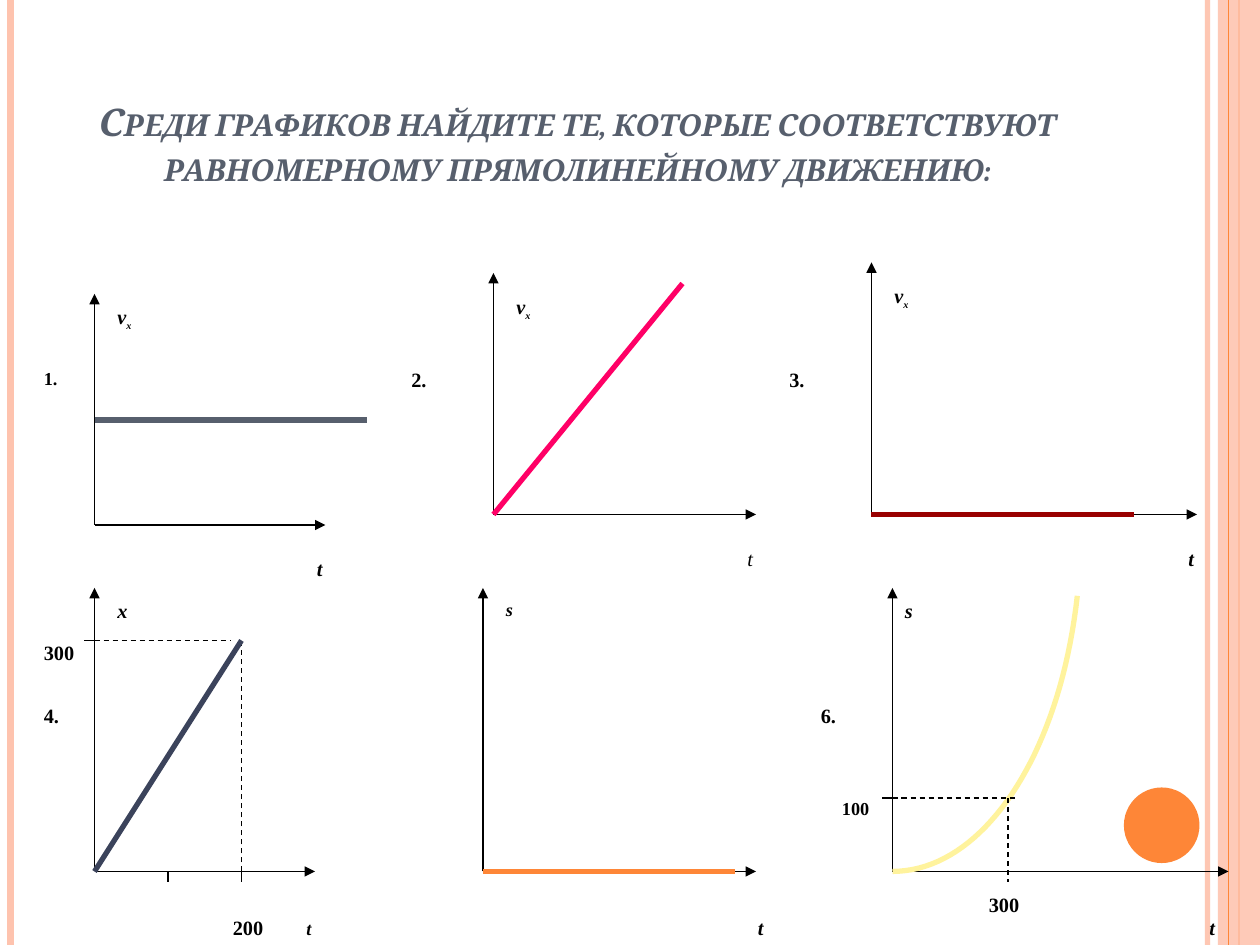
from pptx import Presentation
from pptx.dml.color import RGBColor
from pptx.enum.dml import MSO_LINE
from pptx.enum.shapes import MSO_CONNECTOR, MSO_SHAPE
from pptx.enum.text import MSO_ANCHOR, MSO_AUTO_SIZE, PP_ALIGN
from pptx.oxml.ns import qn
from pptx.util import Pt
from lxml.etree import SubElement

COLORS = {
    "black": "000000", "slate": "575F6D", "navy": "3B435B", "pink": "FF0066",
    "red": "990000", "orange": "FE8637", "peach": "FEC3AE", "yellow": "FFF39D",
}

prs = Presentation()
prs.slide_width, prs.slide_height = Pt(720), Pt(540)
s = prs.slides.add_slide(prs.slide_layouts[5])


def add_run(p, text, size=20, font="Times New Roman", color="black",
            bold=True, italic=False, **attrs):
    r = p.add_run()
    r.text = text
    f = r.font
    f.size, f.name, f.bold, f.italic = Pt(size), font, bold, italic
    f.color.rgb = RGBColor.from_string(COLORS[color])
    for name, value in attrs.items():
        r._r.get_or_add_rPr().set(name, value)


def add_line(x1, y1, x2, y2, color="black", width=0.75, dash=False, arrow=False, alpha=None):
    c = s.shapes.add_connector(MSO_CONNECTOR.STRAIGHT, Pt(x1), Pt(y1), Pt(x2), Pt(y2))
    c.line.color.rgb = RGBColor.from_string(COLORS[color])
    c.line.width = Pt(width)
    if dash:
        c.line.dash_style = MSO_LINE.DASH
    if arrow:
        SubElement(c.line._get_or_add_ln(), qn("a:tailEnd"), type="triangle")
    if alpha:
        for clr in c._element.iter(qn("a:srgbClr")):
            SubElement(clr, qn("a:alpha"), val=str(alpha * 1000))
    SubElement(c._element.spPr, qn("a:effectLst"))


# Side stripes, band and dot
add_line(690, 0, 690, 540, "peach", 3, alpha=93)
add_line(6, 0, 6, 540, "peach", 4.5)
add_line(708, 0, 708, 540, "orange", 1.5)
for kind, x, y, w, h, color, alpha in [
    (MSO_SHAPE.RECTANGLE, 696, 0, 24, 540, "peach", 87),
    (MSO_SHAPE.OVAL, 642.24, 450, 43.2, 43.2, "orange", 100),
]:
    sp = s.shapes.add_shape(kind, Pt(x), Pt(y), Pt(w), Pt(h))
    sp.shadow.inherit = False
    sp.fill.solid()
    sp.fill.fore_color.rgb = RGBColor.from_string(COLORS[color])
    sp.line.fill.background()
    if alpha < 100:
        for clr in sp._element.iter(qn("a:srgbClr")):
            SubElement(clr, qn("a:alpha"), val=str(alpha * 1000))
    if kind == MSO_SHAPE.RECTANGLE:
        add_line(702, 0, 702, 540, "orange")

# Title
title = s.shapes.title
title.left, title.top, title.width, title.height = Pt(36), Pt(21.6), Pt(588), Pt(90)
tf = title.text_frame
tf.word_wrap = True
tf.auto_size = MSO_AUTO_SIZE.NONE
tf.vertical_anchor = MSO_ANCHOR.BOTTOM
p = tf.paragraphs[0]
p.alignment = PP_ALIGN.CENTER
for text, size, strong in [
    ("Среди графиков найдите те, которые соответствуют", 21.6, True),
    (" ", 18, False),
    ("равномерному прямолинейному движению:", 21.6, True),
]:
    add_run(p, text, size, "Cambria", "slate", strong, strong, cap="small")

# Axes: origin x, origin y, end of t axis, top of vertical axis
for x, y, right, top in [
    (54, 300, 186, 168), (282, 294, 432, 156), (498, 294, 684, 150),
    (54, 498, 180, 336), (276, 498, 432, 336), (510, 498, 702, 336),
]:
    add_line(x, y, right, y, arrow=True)
    add_line(x, y, x, top, arrow=True)

# Ticks and dashed guides of graphs 4 and 6
for x in (96, 138):
    add_line(x, 498, x, 504)
add_line(54, 366, 48, 366)
add_line(138, 498, 138, 366, dash=True)
add_line(54, 366, 132, 366, dash=True)

# Straight graphs
for x1, y1, x2, y2, color in [
    (54, 240, 210, 240, "slate"), (282, 294, 390, 162, "pink"),
    (498, 294, 648, 294, "red"), (54, 498, 138, 366, "navy"),
    (276, 498, 420, 498, "orange"),
]:
    add_line(x1, y1, x2, y2, color, 3)

# Curve of graph 6, sampled from a cubic Bezier
bezier = [(510, 498), (561.2, 498), (605.5, 432.5), (615.6, 340.5)]
points = []
for i in range(41):
    t = i / 40
    weights = ((1 - t) ** 3, 3 * t * (1 - t) ** 2, 3 * t * t * (1 - t), t ** 3)
    points.append(tuple(Pt(sum(k * b[axis] for k, b in zip(weights, bezier)))
                        for axis in (0, 1)))
fb = s.shapes.build_freeform(*points[0])
fb.add_line_segments(points[1:], close=False)
curve = fb.convert_to_shape()
curve.shadow.inherit = False
curve.fill.background()
curve.line.color.rgb = RGBColor.from_string(COLORS["yellow"])
curve.line.width = Pt(3)

add_line(510, 456, 504, 456)
add_line(510, 456, 582, 456, dash=True)
add_line(576, 456, 576, 504, dash=True)

# Labels: text, left, top, width, size; letters are italic
for text, x, y, w, size in [
    ("1.", 18, 204, 23.8, 18), ("2.", 228, 204, 24.5, 20), ("3.", 444, 204, 24.5, 20),
    ("4.", 18, 396, 24.5, 20), ("6.", 462, 396, 24.5, 20),
    ("vx", 60, 168, 23.8, 20), ("vx", 288, 162, 23.8, 20), ("vx", 504, 156, 23.8, 20),
    ("x", 60, 336, 20.9, 20), ("s", 282, 336, 19.4, 18), ("s", 510, 336, 19.4, 20),
    ("t", 174, 312, 18, 20), ("t", 420, 306, 18, 20), ("t", 672, 306, 18, 20),
    ("t", 168, 518.4, 18, 18), ("t", 426, 517, 18, 20), ("t", 684, 517, 18, 20),
    ("200", 126, 517, 33.8, 20), ("300", 18, 360, 33.8, 20),
    ("100", 474, 450, 32.4, 18), ("300", 558, 504, 33.8, 20),
]:
    tb = s.shapes.add_textbox(Pt(x), Pt(y), Pt(w), Pt(23 if size == 20 else 21.6))
    tf = tb.text_frame
    tf.word_wrap = False
    tf.auto_size = MSO_AUTO_SIZE.SHAPE_TO_FIT_TEXT
    p = tf.paragraphs[0]
    bold = (text, x) != ("t", 420)
    main, sub = ("v", "x") if text == "vx" else (text, "")
    add_run(p, main, size, bold=bold, italic=main.isalpha(), baseline="30000")
    if sub:
        add_run(p, sub, 10, italic=True, baseline="30000")

prs.save("out.pptx")
